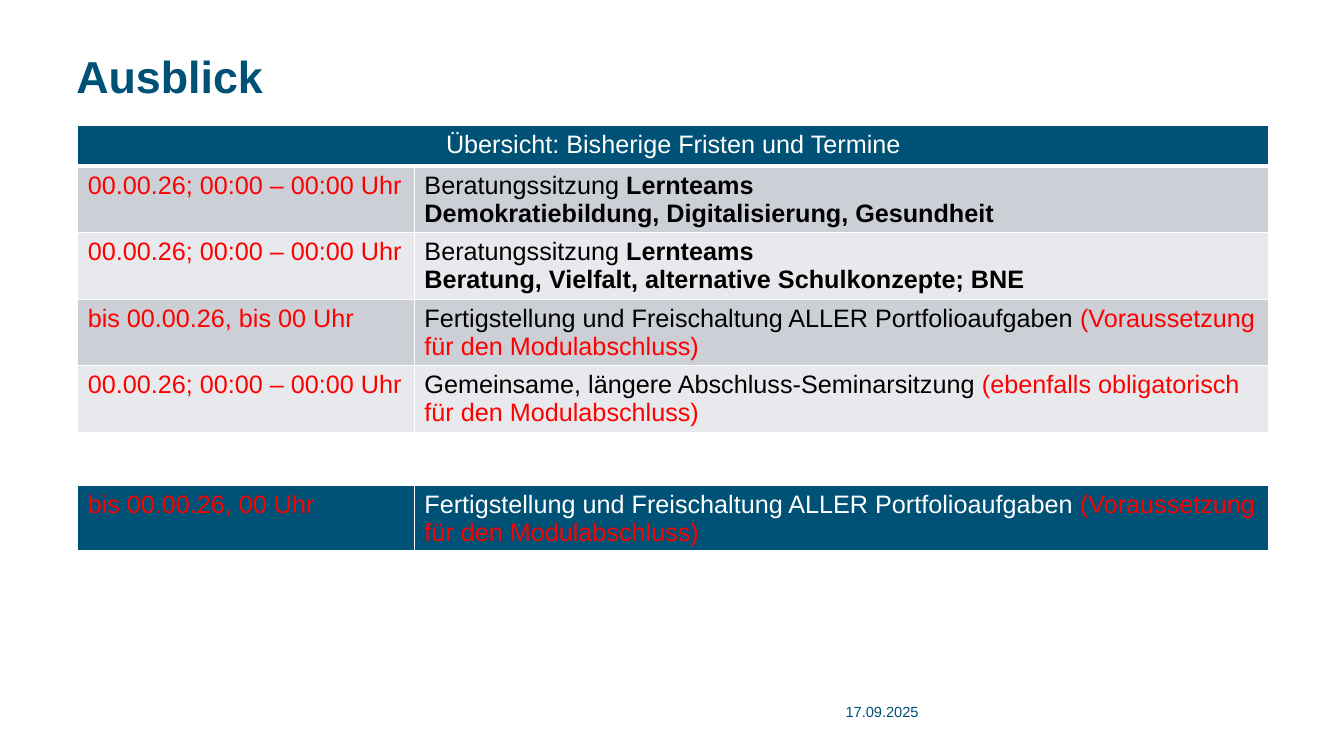
from dataclasses import dataclass

from lxml import etree
from pptx import Presentation
from pptx import util as u
from pptx.dml.color import RGBColor
from pptx.enum import text
from pptx.oxml import ns

COLORS = {
    "petrol": "005176",
    "red": "FF0000",
    "black": "000000",
    "white": "FFFFFF",
    "band_dark": "CCD0D6",
    "band_light": "E7E9EC",
}
TABLE_LEFT = 55.5
COLUMN_WIDTHS = (240.5, 610.5)
HEADER_HEIGHT = 29.2
ROW_HEIGHT = 47.5


@dataclass(frozen=True)
class Span:
    words: str
    color: str = "black"
    bold: bool = False
    size: float = 18


Paragraphs = list[list[Span]]


@dataclass(frozen=True)
class Row:
    cells: list[Paragraphs]
    fill: str
    height: float = ROW_HEIGHT
    bottom_line: float = 1


@dataclass(frozen=True)
class Schedule:
    top: float
    rows: list[Row]


def deadline(words: str) -> Paragraphs:
    return [[Span(words, "red")]]


def consultation(topics: str) -> Paragraphs:
    return [
        [Span("Beratungssitzung "), Span("Lernteams", bold=True)],
        [Span(topics, bold=True)],
    ]


def duty(task: str, condition: str, color: str = "black") -> Paragraphs:
    return [[Span(task, color), Span(condition, "red")]]


SESSION = "00.00.26; 00:00 – 00:00 Uhr"
PORTFOLIO = (
    "Fertigstellung und Freischaltung ALLER Portfolioaufgaben ",
    "(Voraussetzung für den Modulabschluss)",
)
FINAL_SESSION = (
    "Gemeinsame, längere Abschluss-Seminarsitzung ",
    "(ebenfalls obligatorisch für den Modulabschluss)",
)
ENTRIES = [
    [deadline(SESSION), consultation("Demokratiebildung, Digitalisierung, Gesundheit")],
    [deadline(SESSION), consultation("Beratung, Vielfalt, alternative Schulkonzepte; BNE")],
    [deadline("bis 00.00.26, bis 00 Uhr"), duty(*PORTFOLIO)],
    [deadline(SESSION), duty(*FINAL_SESSION)],
]
HEADER = Row(
    [[[Span("Übersicht: Bisherige Fristen und Termine", "white")]], [[]]],
    "petrol", HEADER_HEIGHT, 3,
)
BANDS = ("band_dark", "band_light")
OVERVIEW = Schedule(
    89.5,
    [HEADER] + [Row(cells, BANDS[i % 2]) for i, cells in enumerate(ENTRIES)],
)
REMINDER = Schedule(
    346.5,
    [Row([deadline("bis 00.00.26, 00 Uhr"), duty(*PORTFOLIO, "white")],
         "petrol", bottom_line=3)],
)


def apply(target, values: dict) -> None:
    for name, value in values.items():
        setattr(target, name, value)


def rgb(color: str) -> RGBColor:
    return RGBColor.from_string(COLORS[color])


def write(frame, paragraphs: Paragraphs) -> None:
    for index, spans in enumerate(paragraphs):
        para = frame.paragraphs[0] if index == 0 else frame.add_paragraph()
        for span in spans:
            run = para.add_run()
            run.text = span.words
            apply(run.font, {"name": "Arial", "size": u.Pt(span.size), "bold": span.bold})
            run.font.color.rgb = rgb(span.color)


def draw_borders(cell, bottom_line: float) -> None:
    properties = cell._tc.get_or_add_tcPr()
    weights = {"lnL": 1, "lnR": 1, "lnT": 1, "lnB": bottom_line}
    for index, (side, weight) in enumerate(weights.items()):
        line = etree.Element(ns.qn(f"a:{side}"), w=str(u.Pt(weight)))
        fill = etree.SubElement(line, ns.qn("a:solidFill"))
        etree.SubElement(fill, ns.qn("a:srgbClr"), val=COLORS["white"])
        properties.insert(index, line)


def draw_schedule(page, schedule: Schedule):
    frame = page.shapes.add_table(
        len(schedule.rows), len(COLUMN_WIDTHS),
        u.Pt(TABLE_LEFT), u.Pt(schedule.top), u.Pt(sum(COLUMN_WIDTHS)),
        u.Pt(sum(row.height for row in schedule.rows)),
    )
    table = frame.table
    for column, width in zip(table.columns, COLUMN_WIDTHS):
        column.width = u.Pt(width)
    for row_index, row in enumerate(schedule.rows):
        table.rows[row_index].height = u.Pt(row.height)
        for column_index, paragraphs in enumerate(row.cells):
            cell = table.cell(row_index, column_index)
            cell.fill.solid()
            cell.fill.fore_color.rgb = rgb(row.fill)
            draw_borders(cell, row.bottom_line)
            write(cell.text_frame, paragraphs)
    return table


def place(box, left: float, top: float, width: float, height: float, anchor) -> None:
    apply(box, {"left": u.Pt(left), "top": u.Pt(top),
                "width": u.Pt(width), "height": u.Pt(height)})
    apply(box.text_frame, {
        "margin_left": 0, "margin_right": 0, "margin_top": 0, "margin_bottom": 0,
        "word_wrap": True, "auto_size": text.MSO_AUTO_SIZE.NONE,
        "vertical_anchor": anchor,
    })


def main() -> None:
    deck = Presentation()
    apply(deck, {"slide_width": u.Pt(960), "slide_height": u.Pt(540)})
    page = deck.slides.add_slide(deck.slide_layouts[5])

    title = page.shapes.title
    place(title, 54.5, 39, 862.5, 134, text.MSO_ANCHOR.TOP)
    write(title.text_frame, [[Span("Ausblick", "petrol", True, 32)]])
    apply(title.text_frame.paragraphs[0],
          {"alignment": text.PP_ALIGN.LEFT, "line_spacing": 0.9})

    date = page.shapes.add_textbox(0, 0, 0, 0)
    place(date, 604, 498.5, 96.5, 19.5, text.MSO_ANCHOR.MIDDLE)
    write(date.text_frame, [[Span("17.09.2025", "petrol", size=10.5)]])

    overview = draw_schedule(page, OVERVIEW)
    heading = overview.cell(0, 0)
    heading.merge(overview.cell(0, 1))
    heading.text_frame.paragraphs[0].alignment = text.PP_ALIGN.CENTER
    draw_schedule(page, REMINDER)

    deck.save("out.pptx")


if __name__ == "__main__":
    main()
